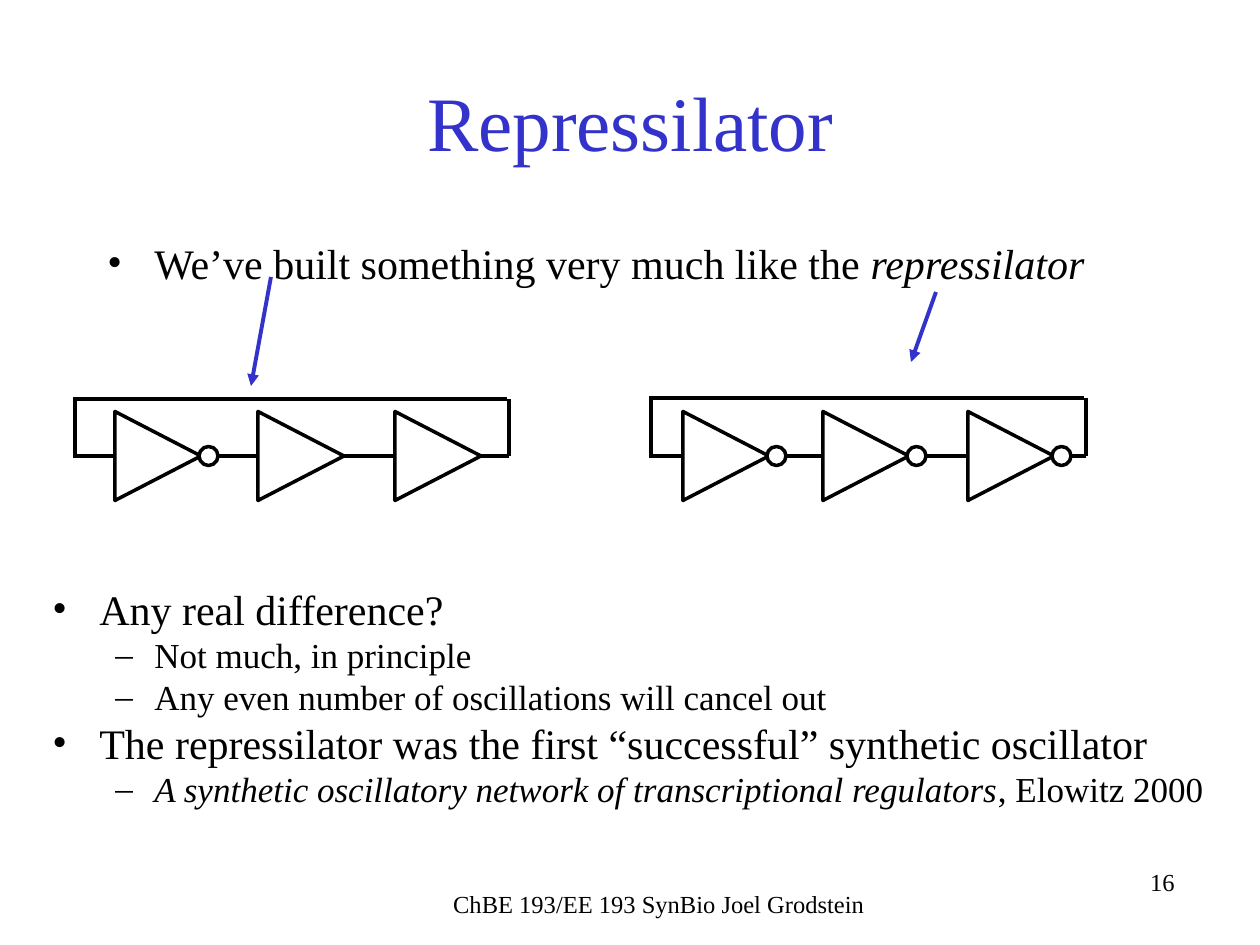
import pptx
import pptx.util
import pptx.dml.color
import pptx.enum.shapes
import pptx.enum.text
import pptx.oxml.ns
import lxml.etree

PX = 914400 // 126
FONT = "Times New Roman"
COLORS = {"ink": "000000", "accent": "3333CC", "paper": "FFFFFF"}
ALIGN = pptx.enum.text.PP_ALIGN
SHAPE = pptx.enum.shapes.MSO_SHAPE
GATE_WIDTH, GATE_HEIGHT, BUBBLE = 86, 89, 19
# Marker, size, left indent and hanging indent for each outline level
LEVELS = [("•", 24, 47, 47), ("–", 20, 102, 39)]


def color(name):
    return pptx.dml.color.RGBColor.from_string(COLORS[name])


def emu(*lengths):
    return [pptx.util.Emu(round(length * PX)) for length in lengths]


def add_xml(parent, tag, **attributes):
    return lxml.etree.SubElement(parent, pptx.oxml.ns.qn(tag), attributes)


def format_para(para, size, ink="ink", align=ALIGN.LEFT):
    para.alignment = align
    for span in para.runs:
        span.font.name = FONT
        span.font.size = pptx.util.Pt(size)
        span.font.color.rgb = color(ink)


def add_title(page, box, text):
    title = page.shapes.title
    title.left, title.top, title.width, title.height = emu(*box)
    title.text_frame.text = text
    title.text_frame.vertical_anchor = pptx.enum.text.MSO_ANCHOR.MIDDLE
    format_para(title.text_frame.paragraphs[0], 44, "accent", ALIGN.CENTER)


def add_text_box(page, box):
    frame = page.shapes.add_textbox(*emu(*box)).text_frame
    frame.word_wrap = True
    return frame


def add_label(page, box, text, align):
    frame = add_text_box(page, box)
    frame.text = text
    format_para(frame.paragraphs[0], 14, align=align)


def add_bullets(page, box, items):
    """Each item is a level and its (text, italic) spans."""
    frame = add_text_box(page, box)
    for index, (level, spans) in enumerate(items):
        para = frame.add_paragraph() if index else frame.paragraphs[0]
        marker, size, left, hang = LEVELS[level]
        para.level = level
        para.space_before = pptx.util.Pt(0 if index else 3)
        for text, italic in spans:
            span = para.add_run()
            span.text = text
            span.font.italic = italic
        format_para(para, size)
        properties = para._p.get_or_add_pPr()
        margin, indent = emu(left, -hang)
        properties.set("marL", str(margin))
        properties.set("indent", str(indent))
        add_xml(properties, "a:buFont", typeface=FONT)
        add_xml(properties, "a:buChar", char=marker)


def add_line(page, start, end, ink="ink", arrow=False):
    line = page.shapes.add_connector(
        pptx.enum.shapes.MSO_CONNECTOR.STRAIGHT, *emu(*start, *end))
    line.line.color.rgb = color(ink)
    line.line.width = pptx.util.Pt(2.25)
    if arrow:
        add_xml(line.line._get_or_add_ln(), "a:tailEnd", type="triangle")
    add_xml(line._element.spPr, "a:effectLst")


def add_outline(page, kind, box):
    shape = page.shapes.add_shape(kind, *emu(*box))
    shape.shadow.inherit = False
    shape.fill.solid()
    shape.fill.fore_color.rgb = color("paper")
    shape.line.color.rgb = color("ink")
    shape.line.width = pptx.util.Pt(2)
    return shape


def add_gate(page, left, middle, inverting):
    # The box is given before the quarter turn, so its sides are swapped
    center = left + GATE_WIDTH / 2
    triangle = add_outline(page, SHAPE.FLOWCHART_MERGE, (
        center - GATE_HEIGHT / 2, middle - GATE_WIDTH / 2,
        GATE_HEIGHT, GATE_WIDTH))
    triangle.rotation = 270
    if inverting:
        add_outline(page, SHAPE.OVAL, (
            left + GATE_WIDTH - 2, middle - BUBBLE / 2, BUBBLE, BUBBLE))


def add_ring(page, box, gates):
    """Gates are (offset from the ring's left side, inverting)."""
    left, top, width, height = box
    right, bottom = left + width, top + height
    # Feedback loop
    add_line(page, (left - 2, bottom), (right, bottom))
    add_line(page, (right, top), (right, bottom))
    add_line(page, (left, top - 2), (left, bottom))
    add_line(page, (left - 2, top), (right - 2, top))
    # Gates on the lower wire
    for offset, inverting in gates:
        add_gate(page, left + offset, bottom, inverting)


def main():
    deck = pptx.Presentation()
    deck.slide_width, deck.slide_height = emu(1260, 945)
    page = deck.slides.add_slide(deck.slide_layouts[5])

    add_title(page, (95, 42, 1071, 158), "Repressilator")
    add_bullets(page, (95, 231, 1071, 82), [
        (0, [("We’ve built something very much like the ", False),
             ("repressilator", True)]),
    ])

    # The two oscillators, and arrows from the words to them
    add_ring(page, (75, 399, 434, 57),
             [(40, True), (183, False), (320, False)])
    add_ring(page, (651, 398, 435, 58),
             [(32, True), (172, True), (317, True)])
    add_line(page, (271, 277), (251, 386), "accent", arrow=True)
    add_line(page, (936, 292), (911, 362), "accent", arrow=True)

    add_bullets(page, (40, 577, 1190, 267), [
        (0, [("Any real difference?", False)]),
        (1, [("Not much, in principle", False)]),
        (1, [("Any even number of oscillations will cancel out", False)]),
        (0, [("The repressilator was the first “successful” "
              "synthetic oscillator", False)]),
        (1, [("A synthetic oscillatory network of transcriptional "
              "regulators", True), (", Elowitz 2000", False)]),
    ])

    # Footer and page number
    add_label(page, (431, 883, 456, 40),
              "ChBE 193/EE 193 SynBio Joel Grodstein", ALIGN.CENTER)
    add_label(page, (788, 861, 399, 63), "16", ALIGN.RIGHT)
    deck.save("out.pptx")


if __name__ == "__main__":
    main()
